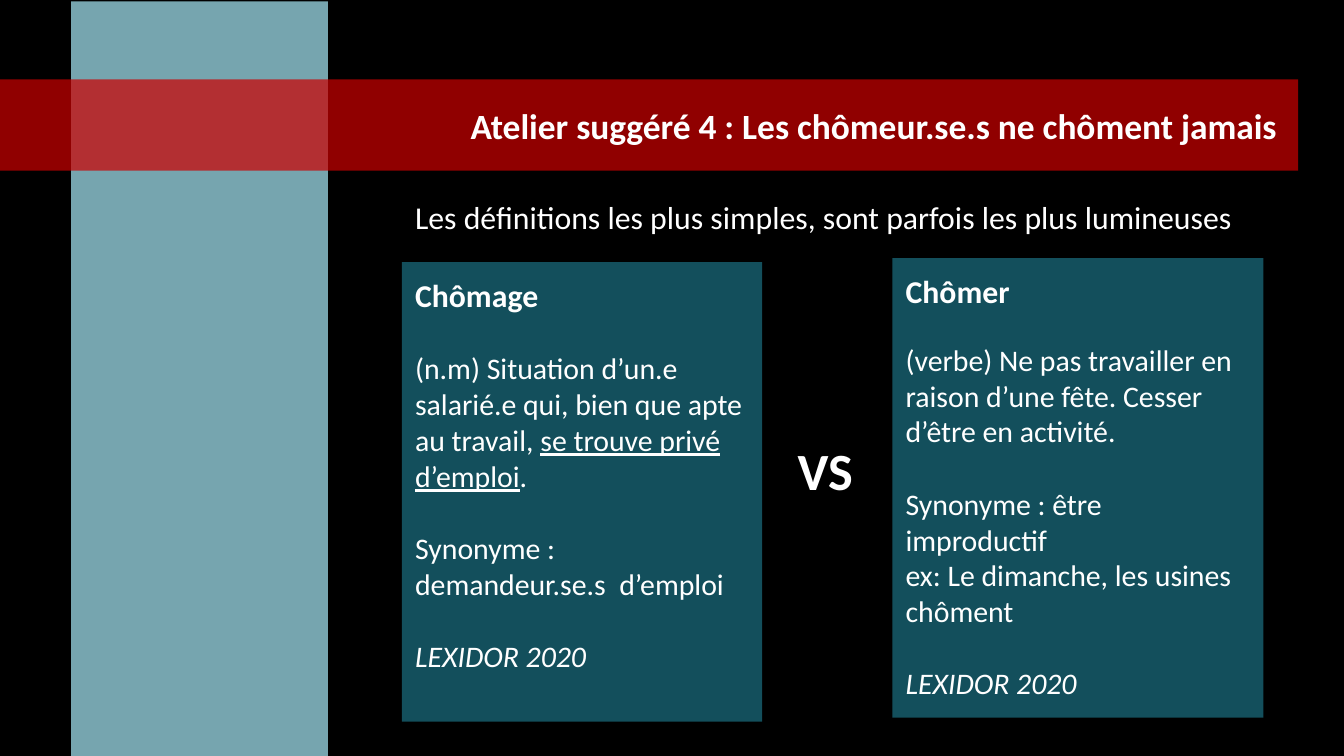
"""Build the slide contrasting the definitions of "chômage" and "chômer"."""
from lxml.etree import SubElement
from pptx import Presentation
from pptx.dml.color import RGBColor
from pptx.enum.shapes import MSO_SHAPE
from pptx.enum.text import MSO_ANCHOR, PP_ALIGN
from pptx.oxml.ns import qn
from pptx.util import Inches, Pt

BLACK = RGBColor(0x00, 0x00, 0x00)
WHITE = RGBColor(0xFF, 0xFF, 0xFF)
RED = RGBColor(0xCC, 0x00, 0x00)
TEAL = RGBColor(0x13, 0x4F, 0x5C)
PALE_BLUE = RGBColor(0x76, 0xA5, 0xAF)

WIDTH = 10
HEIGHT = WIDTH * 9 / 16
INSET = 0.1
CARD_RIGHT_INSET = 0.12
CARD_HEIGHT = 3.42
LINE = 1.22
BODY = 16
TITLE = "Atelier suggéré 4 : Les chômeur.se.s ne chôment jamais "
SUBTITLE = "Les définitions les plus simples, sont parfois les plus lumineuses"
SOURCE = "LEXIDOR 2020"

CARDS = [
    {
        "at": (2.99, 1.95, 2.68, CARD_HEIGHT),
        "term": "Chômage",
        "body": [
            (BODY, ["(n.m) Situation d’un.e salarié.e qui, bien que apte au travail, ",
                    "se trouve privé d’emploi", "."]),
            (BODY, ["Synonyme : demandeur.se.s  d’emploi"]),
        ],
    },
    {
        "at": (6.64, 1.92, 2.76, CARD_HEIGHT),
        "term": "Chômer",
        "body": [
            (14, ["(verbe) Ne pas travailler en raison d’une fête. "
                  "Cesser d’être en activité."]),
            (BODY, ["Synonyme : être improductif"]),
            (0, ["ex: Le dimanche, les usines chôment"]),
        ],
    },
]


def add_box(slide, at, color):
    sp = slide.shapes.add_shape(MSO_SHAPE.RECTANGLE, *map(Inches, at))
    sp.shadow.inherit = False
    sp.fill.solid()
    sp.fill.fore_color.rgb = color
    sp.line.fill.background()
    return sp


def setup_frame(sp, anchor=MSO_ANCHOR.TOP, right=INSET):
    tf = sp.text_frame
    tf.word_wrap = True
    tf.vertical_anchor = anchor
    tf.margin_left = tf.margin_top = tf.margin_bottom = Inches(INSET)
    tf.margin_right = Inches(right)
    return tf


def write(p, runs, size, bold=False, italic=False, align=PP_ALIGN.LEFT, gap=0):
    p.alignment = align
    p.space_before = Pt(round(gap * LINE, 1))
    p.font.name = "Calibri"
    p.font.size = Pt(size)
    p.font.color.rgb = WHITE
    p.font.bold = bold
    p.font.italic = italic
    for i, text in enumerate(runs):
        r = p.add_run()
        r.text = text
        if i % 2:
            r.font.underline = True


def add_label(slide, at, text, size, **style):
    tf = setup_frame(slide.shapes.add_textbox(*map(Inches, at)))
    write(tf.paragraphs[0], [text], size, **style)


def add_card(slide, card):
    tf = setup_frame(add_box(slide, card["at"], TEAL), right=CARD_RIGHT_INSET)
    write(tf.paragraphs[0], [card["term"]], 17, bold=True)
    for gap, runs in card["body"]:
        write(tf.add_paragraph(), runs, BODY, gap=gap)
    write(tf.add_paragraph(), [SOURCE], BODY, italic=True, gap=BODY)


def main():
    prs = Presentation()
    prs.slide_width, prs.slide_height = Inches(WIDTH), Inches(HEIGHT)
    slide = prs.slides.add_slide(prs.slide_layouts[6])
    slide.background.fill.solid()
    slide.background.fill.fore_color.rgb = BLACK

    add_box(slide, (0.53, 0.01, 1.91, 5.62), PALE_BLUE)
    banner = add_box(slide, (0, 0.59, 9.66, 0.68), RED)
    color = banner.element.spPr.find(qn("a:solidFill"))[0]
    SubElement(color, qn("a:alpha"), val="71000")
    tf = setup_frame(banner, MSO_ANCHOR.MIDDLE)
    write(tf.paragraphs[0], [TITLE], 19, bold=True, align=PP_ALIGN.RIGHT)

    add_label(slide, (2.99, 1.37, 6.64, 0.49), SUBTITLE, 17)
    add_label(slide, (5.75, 3.16, 0.78, 0.67), "VS", 28, bold=True,
              align=PP_ALIGN.CENTER)
    for card in CARDS:
        add_card(slide, card)
    prs.save("out.pptx")


if __name__ == "__main__":
    main()
